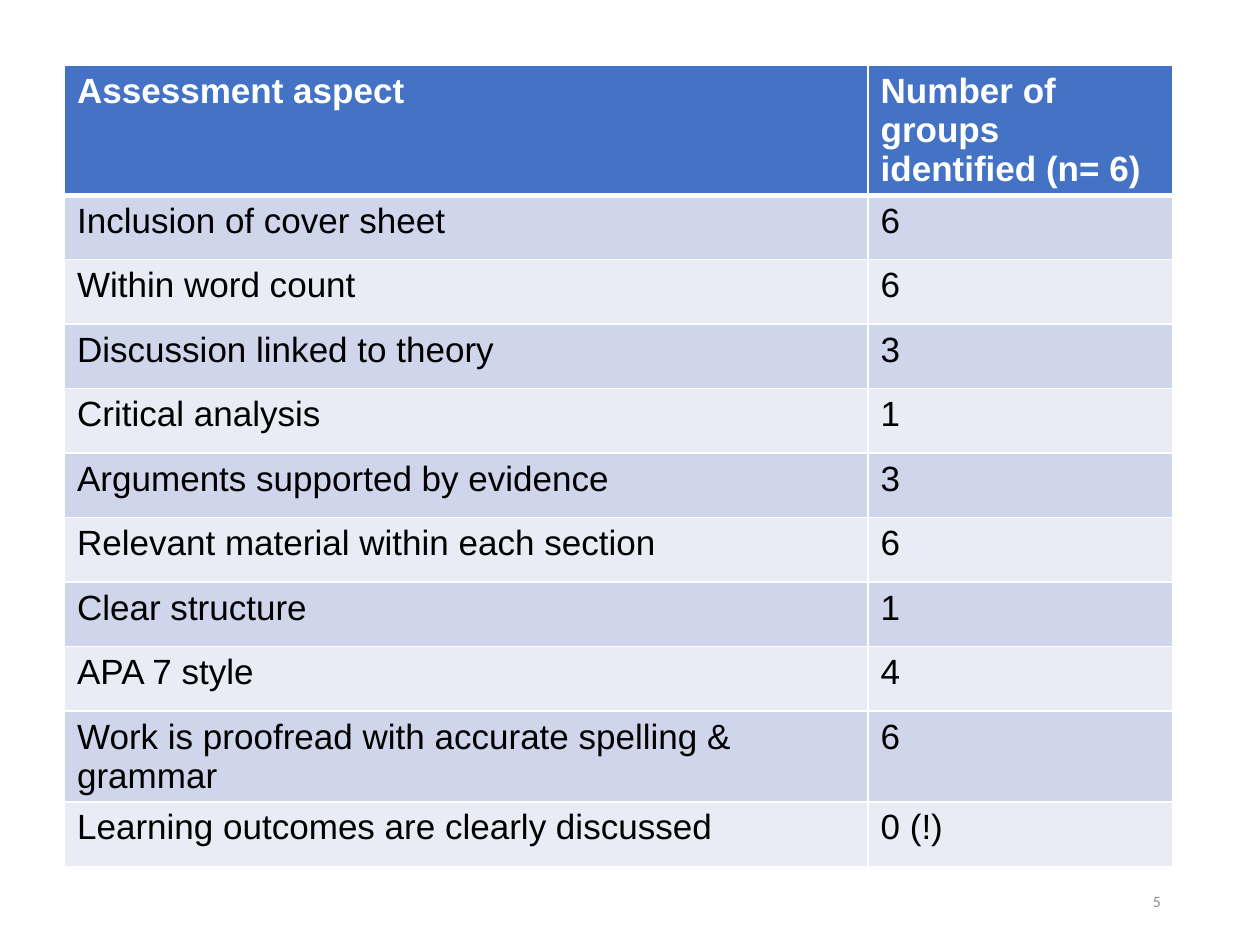
from dataclasses import dataclass

from lxml import etree
from pptx import Presentation
from pptx.dml.color import RGBColor
from pptx.enum.text import MSO_ANCHOR, PP_ALIGN
from pptx.oxml.ns import qn
from pptx.util import Cm, Pt

MIDDLE = MSO_ANCHOR.MIDDLE
LEFT, RIGHT = PP_ALIGN.LEFT, PP_ALIGN.RIGHT
BLANK_LAYOUT = 6


@dataclass(frozen=True)
class Theme:
    header_fill: str = "4472C4"
    band_fills: tuple = ("CFD5EA", "E9EBF5")
    white: str = "FFFFFF"
    black: str = "000000"
    grey: str = "8C8C8C"
    table_font: str = "Arial"
    number_font: str = "Calibri"
    table_size: int = 20
    number_size: int = 9
    grid_width: int = 1
    header_rule_width: int = 3


class SlideBuilder:
    def __init__(self, page, theme):
        self.page = page
        self.theme = theme

    def add_text(self, frame, text, color, name, size, bold=False, align=LEFT):
        para = frame.paragraphs[0]
        para.alignment = align
        span = para.add_run()
        span.text = text
        for key, value in {"name": name, "size": Pt(size), "bold": bold}.items():
            setattr(span.font, key, value)
        span.font.color.rgb = RGBColor.from_string(color)

    def borders(self, cell, widths):
        # Border elements must stand before the cell fill
        properties = cell._tc.get_or_add_tcPr()
        for index, (side, width) in enumerate(widths.items()):
            line = etree.Element(qn(f"a:ln{side}"), w=str(Pt(width)))
            fill = etree.SubElement(line, qn("a:solidFill"))
            etree.SubElement(fill, qn("a:srgbClr"), val=self.theme.white)
            properties.insert(index, line)

    def table(self, rows, left, top, column_widths, row_heights):
        theme = self.theme
        grid = self.page.shapes.add_table(
            len(rows), len(column_widths), Cm(left), Cm(top),
            Cm(sum(column_widths)), Cm(sum(row_heights))).table
        for column, width in zip(grid.columns, column_widths):
            column.width = Cm(width)
        for index, (row, height) in enumerate(zip(grid.rows, row_heights)):
            row.height = Cm(height)
            header = index == 0
            fill = theme.header_fill if header else theme.band_fills[(index - 1) % 2]
            color = theme.white if header else theme.black
            widths = dict.fromkeys("LRTB", theme.grid_width)
            if header:
                widths["B"] = theme.header_rule_width
            elif index == 1:
                widths["T"] = theme.header_rule_width
            for cell, text in zip(row.cells, rows[index]):
                cell.fill.solid()
                cell.fill.fore_color.rgb = RGBColor.from_string(fill)
                self.borders(cell, widths)
                self.add_text(cell.text_frame, text, color,
                              theme.table_font, theme.table_size, bold=header)

    def page_number(self, text, left, top, width, height):
        box = self.page.shapes.add_textbox(Cm(left), Cm(top), Cm(width), Cm(height))
        frame = box.text_frame
        frame.word_wrap = True
        frame.vertical_anchor = MIDDLE
        self.add_text(frame, text, self.theme.grey, self.theme.number_font,
                      self.theme.number_size, align=RIGHT)


ASSESSMENT_ROWS = [
    ("Assessment aspect", "Number of groups identified (n= 6)"),
    ("Inclusion of cover sheet", "6"),
    ("Within word count", "6"),
    ("Discussion linked to theory", "3"),
    ("Critical analysis", "1"),
    ("Arguments supported by evidence", "3"),
    ("Relevant material within each section", "6"),
    ("Clear structure", "1"),
    ("APA 7 style", "4"),
    ("Work is proofread with accurate spelling & grammar", "6"),
    ("Learning outcomes are clearly discussed", "0 (!)"),
]


def main():
    deck = Presentation()
    deck.slide_width, deck.slide_height = Cm(25.4), Cm(19.05)
    page = deck.slides.add_slide(deck.slide_layouts[BLANK_LAYOUT])
    builder = SlideBuilder(page, Theme())

    # Assessment results: a taller header above equal rows
    row_heights = [1.78] + [1.3] * (len(ASSESSMENT_ROWS) - 1)
    builder.table(ASSESSMENT_ROWS, 1.3, 1.32, (16.2, 6.15), row_heights)

    # Page number
    builder.page_number("5", 17.93, 17.65, 5.72, 1.02)

    deck.save("out.pptx")


if __name__ == "__main__":
    main()
